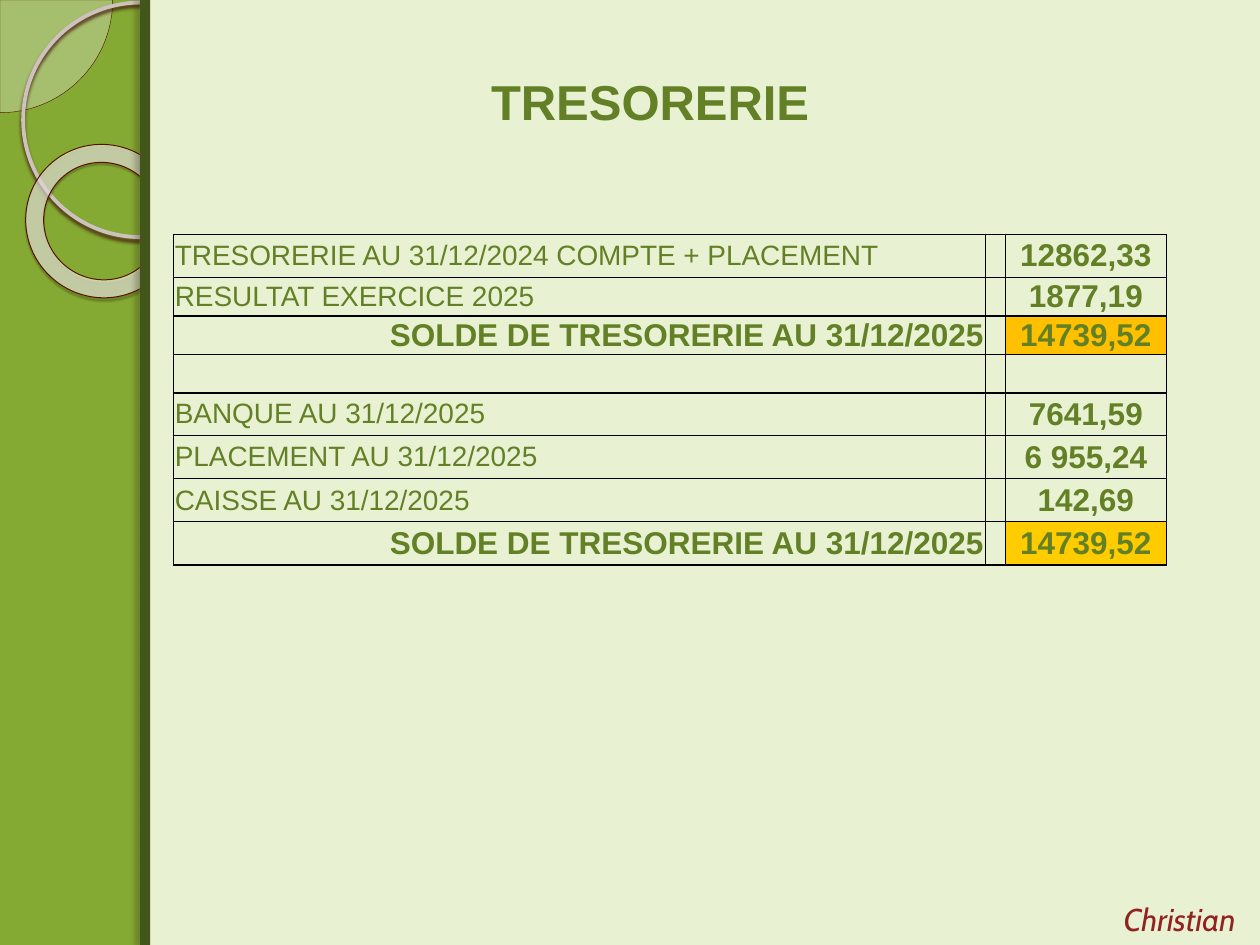
from dataclasses import dataclass

from lxml.etree import SubElement
from pptx import Presentation
from pptx.dml.color import RGBColor as RGB
from pptx.enum.shapes import MSO_SHAPE as Shape
from pptx.enum.text import MSO_ANCHOR as Anchor, PP_ALIGN as Align
from pptx.oxml.ns import qn
from pptx.util import Pt


@dataclass(frozen=True)
class Theme:
    leaf: str = "84AA33"
    panel: str = "E8F2D3"
    stripe: str = "42551A"
    stripe_shadow: str = "29130D"
    petal: str = "ECEAE9"
    petal_edge: str = "591502"
    hoop: str = "CEC2C0"
    hoop_shadow: str = "44170B"
    ring: str = "F8F6F6"
    ring_edge: str = "561200"
    ring_shadow: str = "260901"
    text: str = "638026"
    signature: str = "922222"
    border: str = "000000"
    amber: str = "FFC000"
    yellow: str = "FFCC00"
    font: str = "Arial"
    signature_font: str = "Cabin"
    title_size: int = 28
    total_size: int = 18
    label_size: int = 16


THEME = Theme()
ACCOUNTS = [
    ("TRESORERIE AU 31/12/2024 COMPTE + PLACEMENT", "12862,33", None),
    ("RESULTAT EXERCICE 2025", "1877,19", None),
    ("SOLDE DE TRESORERIE AU 31/12/2025", "14739,52", THEME.amber),
    ("", "", None),
    ("BANQUE AU 31/12/2025", "7641,59", None),
    ("PLACEMENT AU 31/12/2025", "6 955,24", None),
    ("CAISSE AU 31/12/2025", "142,69", None),
    ("SOLDE DE TRESORERIE AU 31/12/2025", "14739,52", THEME.yellow),
]
COLUMN_WIDTHS = (463.7, 11.5, 92.2)
TALL_ROW, SHORT_ROW = 24.6, 22
SHORT_ROWS = {1, 2, 3}
HEAVY_RULES = {0, 2, 3, 4, 8}


def apply_format(target, values):
    for name, value in values.items():
        setattr(target, name, value)


def write(paragraph, words, align, color, **font_values):
    paragraph.alignment = align
    run = paragraph.add_run()
    run.text = words
    apply_format(run.font, font_values)
    run.font.color.rgb = RGB.from_string(color)


def add_color(parent, color, opacity=100):
    fill = SubElement(parent, qn("a:solidFill"))
    add_alpha(SubElement(fill, qn("a:srgbClr"), val=color), opacity)


def add_alpha(color_element, opacity):
    if opacity < 100:
        SubElement(color_element, qn("a:alpha"), val=str(opacity * 1000))


def add_shadow(shape, color, opacity, blur, distance, angle):
    effects = shape._element.spPr.find(qn("a:effectLst"))
    shadow = SubElement(effects, qn("a:outerShdw"), blurRad=str(Pt(blur)),
                        dist=str(Pt(distance)), dir=str(angle * 60000),
                        algn="ctr", rotWithShape="0")
    add_alpha(SubElement(shadow, qn("a:srgbClr"), val=color), opacity)


def add_decor(slide, kind, box, fill=None, opacity=100, line=None,
              shadow=None, adjustments=(), rotation=0):
    decor = slide.shapes.add_shape(kind, *map(Pt, box))
    decor.shadow.inherit = False
    decor.rotation = rotation
    for index, value in enumerate(adjustments):
        decor.adjustments[index] = value
    if fill:
        decor.fill.solid()
        decor.fill.fore_color.rgb = RGB.from_string(fill)
        add_alpha(decor._element.spPr.find(qn("a:solidFill"))[0], opacity)
    else:
        decor.fill.background()
    if line:
        color, width = line
        decor.line.color.rgb = RGB.from_string(color)
        decor.line.width = Pt(width)
    else:
        decor.line.fill.background()
    if shadow:
        add_shadow(decor, *shadow)


def add_caption(slide, box, words, align, color, **font_values):
    frame = slide.shapes.add_textbox(*map(Pt, box)).text_frame
    frame.word_wrap = True
    write(frame.paragraphs[0], words, align, color, **font_values)


def add_borders(cell, row, column):
    def rule(heavy):
        return 1 if heavy else 0.5

    widths = {
        "a:lnL": rule(column == 0),
        "a:lnR": rule(column == len(COLUMN_WIDTHS) - 1),
        "a:lnT": rule(row in HEAVY_RULES),
        "a:lnB": rule(row + 1 in HEAVY_RULES),
    }
    properties = cell._tc.get_or_add_tcPr()
    for tag, width in widths.items():
        add_color(SubElement(properties, qn(tag), w=str(Pt(width))), THEME.border)


def fill_cell(cell, words, align, strong, highlight):
    apply_format(cell, {
        "margin_left": Pt(0.72), "margin_right": Pt(0.72),
        "margin_top": 0, "margin_bottom": 0, "vertical_anchor": Anchor.MIDDLE,
    })
    if highlight:
        cell.fill.solid()
        cell.fill.fore_color.rgb = RGB.from_string(highlight)
    else:
        cell.fill.background()
    if words:
        size = THEME.total_size if strong else THEME.label_size
        write(cell.text_frame.paragraphs[0], words, align, THEME.text,
              name=THEME.font, size=Pt(size), bold=strong)


def add_accounts(slide):
    heights = [SHORT_ROW if row in SHORT_ROWS else TALL_ROW
               for row in range(len(ACCOUNTS))]
    box = (99.2, 133.9, sum(COLUMN_WIDTHS), sum(heights))
    accounts = slide.shapes.add_table(
        len(ACCOUNTS), len(COLUMN_WIDTHS), *map(Pt, box)).table
    apply_format(accounts, {"first_row": False, "horz_banding": False})
    for column, width in zip(accounts.columns, COLUMN_WIDTHS):
        column.width = Pt(width)
    for row, (label, amount, highlight) in enumerate(ACCOUNTS):
        accounts.rows[row].height = Pt(heights[row])
        is_total = highlight is not None
        label_align = Align.RIGHT if is_total else Align.LEFT
        contents = [
            (label, label_align, is_total, None),
            ("", Align.LEFT, False, None),
            (amount, Align.CENTER, True, highlight),
        ]
        for column, content in enumerate(contents):
            cell = accounts.cell(row, column)
            add_borders(cell, row, column)
            fill_cell(cell, *content)


def add_backdrop(slide):
    slide.background.fill.solid()
    slide.background.fill.fore_color.rgb = RGB.from_string(THEME.leaf)
    add_decor(slide, Shape.PIE, (-64.4, -64.4, 128.8, 128.8), THEME.petal, 33,
              (THEME.petal_edge, 0.25), adjustments=(0, 54))
    add_decor(slide, Shape.OVAL, (13.2, 1.5, 134, 134), line=(THEME.hoop, 2.15),
              shadow=(THEME.hoop_shadow, 85, 2, 2, 90))
    add_decor(slide, Shape.DONUT, (14.4, 82.8, 88.6, 87.1), THEME.ring, 60,
              (THEME.ring_edge, 0.58), (THEME.ring_shadow, 35, 1, 1.2, 75),
              (0.118,), 38.6)
    add_decor(slide, Shape.RECTANGLE, (80, 0, 640, 540), THEME.panel)
    add_decor(slide, Shape.RECTANGLE, (80, 0, 5.8, 540), THEME.stripe,
              shadow=(THEME.stripe_shadow, 25, 3, 3, 180))


def main():
    deck = Presentation()
    apply_format(deck, {"slide_width": Pt(720), "slide_height": Pt(540)})
    slide = deck.slides.add_slide(deck.slide_layouts[6])
    add_backdrop(slide)
    add_accounts(slide)
    add_caption(slide, (184.3, 37.4, 374.4, 41), "TRESORERIE", Align.CENTER,
                THEME.text, name=THEME.font, size=Pt(THEME.title_size), bold=True)
    add_caption(slide, (635, 511, 85, 29), "Christian", Align.LEFT,
                THEME.signature, name=THEME.signature_font,
                size=Pt(THEME.total_size), italic=True)
    deck.save("out.pptx")


if __name__ == "__main__":
    main()
